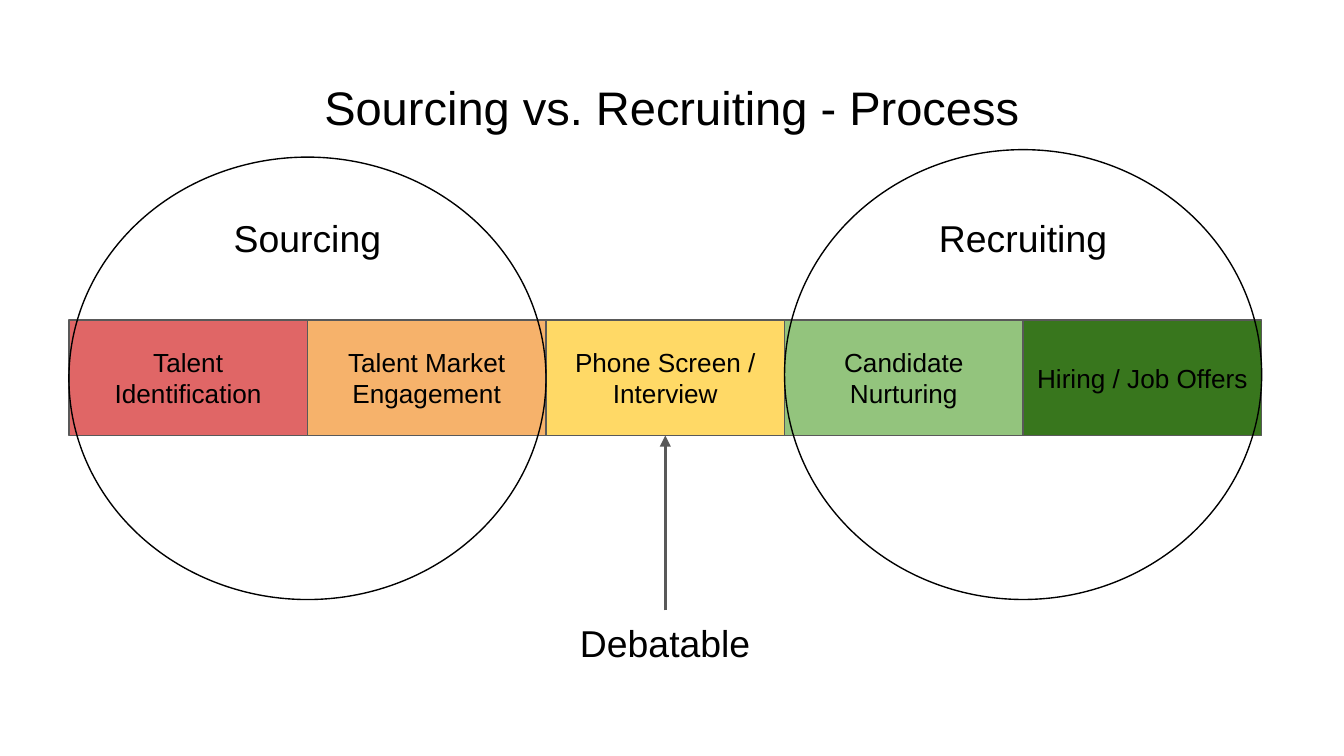
from lxml.etree import SubElement
from pptx import Presentation
from pptx.dml.color import RGBColor
from pptx.enum.shapes import MSO_CONNECTOR, MSO_SHAPE
from pptx.enum.text import MSO_ANCHOR as Anchor, MSO_AUTO_SIZE as AutoSize, PP_ALIGN as Align
from pptx.oxml.ns import qn
from pptx.util import Pt

BLACK = RGBColor(0x00, 0x00, 0x00)
GRAY = RGBColor(0x59, 0x59, 0x59)
RED = RGBColor(0xE0, 0x66, 0x66)
ORANGE = RGBColor(0xF6, 0xB2, 0x6B)
YELLOW = RGBColor(0xFF, 0xD9, 0x66)
LIGHT_GREEN = RGBColor(0x93, 0xC4, 0x7D)
DARK_GREEN = RGBColor(0x38, 0x76, 0x1D)

BAR_LEFT, BAR_TOP = 36.9, 171.4
STEP_WIDTH, STEP_HEIGHT = 127.8, 61.9
LABEL_WIDTH, LABEL_HEIGHT = 123, 40


def write_text(shape, text, size, anchor=Anchor.TOP):
    frame = shape.text_frame
    frame_format = {
        "text": text, "word_wrap": True, "auto_size": AutoSize.NONE, "vertical_anchor": anchor,
        "margin_left": Pt(7.2), "margin_right": Pt(7.2),
        "margin_top": Pt(7.2), "margin_bottom": Pt(7.2),
    }
    for name, value in frame_format.items():
        setattr(frame, name, value)
    para = frame.paragraphs[0]
    para.alignment = Align.CENTER
    span = para.runs[0]
    for name, value in {"name": "Arial", "size": Pt(size)}.items():
        setattr(span.font, name, value)
    span.font.color.rgb = BLACK


def add_outlined(kind, left, top, width, height, line_color):
    shape = page.shapes.add_shape(kind, Pt(left), Pt(top), Pt(width), Pt(height))
    shape.shadow.inherit = False
    shape.line.color.rgb = line_color
    shape.line.width = Pt(0.75)
    return shape


deck = Presentation()
deck.slide_width, deck.slide_height = Pt(720), Pt(405)
page = deck.slides.add_slide(deck.slide_layouts[5])

title = page.shapes.title
title_place = {"left": Pt(24.5), "top": Pt(35), "width": Pt(671), "height": Pt(45.1)}
for name, value in title_place.items():
    setattr(title, name, value)
write_text(title, "Sourcing vs. Recruiting - Process", 25.2)

# Process steps
steps = [
    ("Talent Identification", RED),
    ("Talent Market Engagement", ORANGE),
    ("Phone Screen / Interview", YELLOW),
    ("Candidate Nurturing", LIGHT_GREEN),
    ("Hiring / Job Offers", DARK_GREEN),
]
for index, (text, color) in enumerate(steps):
    left = BAR_LEFT + index * STEP_WIDTH
    step = add_outlined(MSO_SHAPE.RECTANGLE, left, BAR_TOP, STEP_WIDTH, STEP_HEIGHT, GRAY)
    step.fill.solid()
    step.fill.fore_color.rgb = color
    write_text(step, text, 14, Anchor.MIDDLE)

# Each circle spans two steps
for first_step, top in [(0, 84.2), (3, 80.2)]:
    left = BAR_LEFT + first_step * STEP_WIDTH
    circle = add_outlined(MSO_SHAPE.OVAL, left, top, 2 * STEP_WIDTH, 321.2 - top, BLACK)
    circle.fill.background()

# Arrow up to the middle step
middle = BAR_LEFT + 2.5 * STEP_WIDTH
arrow = page.shapes.add_connector(
    MSO_CONNECTOR.STRAIGHT, Pt(middle), Pt(327), Pt(middle), Pt(BAR_TOP + STEP_HEIGHT))
arrow.line.color.rgb = GRAY
arrow.line.width = Pt(1.5)
SubElement(arrow.line._get_or_add_ln(), qn("a:tailEnd"), type="triangle")
SubElement(arrow._element.spPr, qn("a:effectLst"))

# Labels, centred on a position counted in steps
for text, position, top in [("Sourcing", 1, 108), ("Recruiting", 4, 108), ("Debatable", 2.5, 325)]:
    left = BAR_LEFT + position * STEP_WIDTH - LABEL_WIDTH / 2
    box = page.shapes.add_textbox(Pt(left), Pt(top), Pt(LABEL_WIDTH), Pt(LABEL_HEIGHT))
    write_text(box, text, 20)

deck.save("out.pptx")
